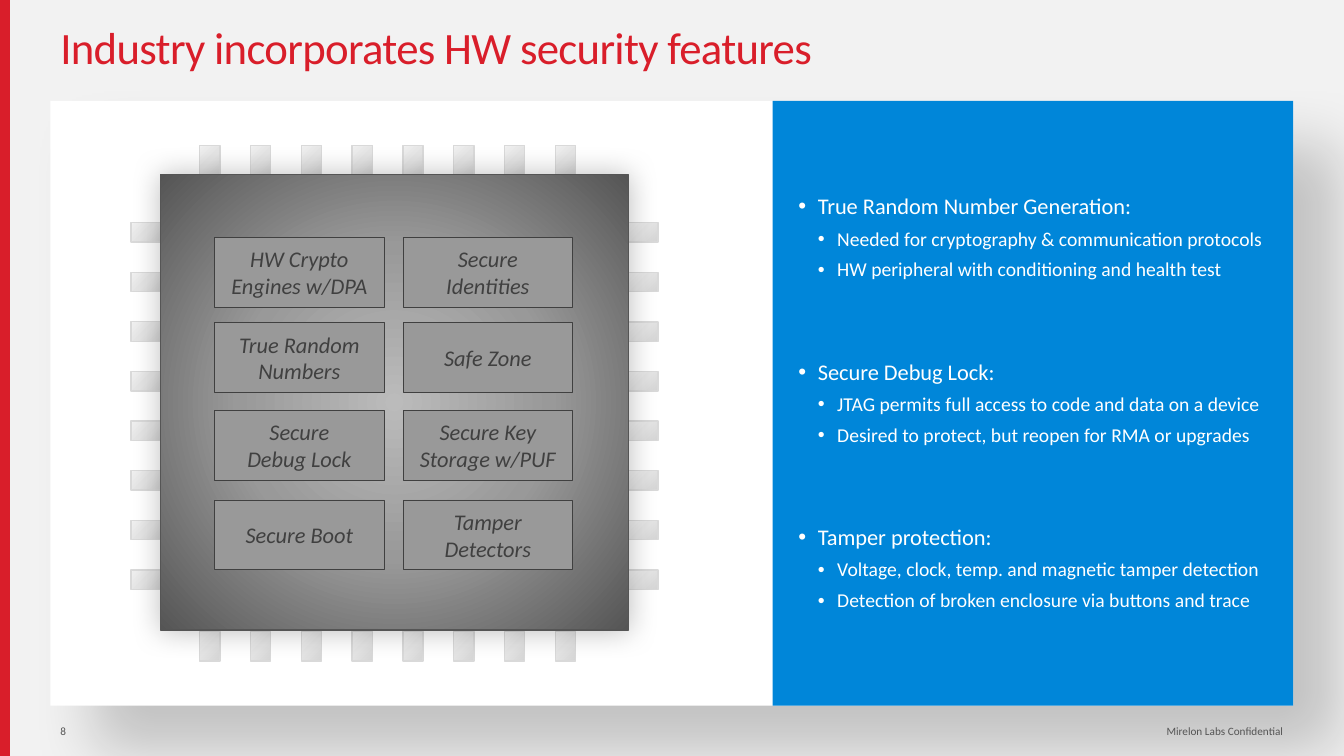
import dataclasses

import pptx
import pptx.dml.color
import pptx.enum.shapes
import pptx.enum.text
import pptx.oxml
import pptx.oxml.ns
import pptx.util

Cm = pptx.util.Cm
Pt = pptx.util.Pt
ALIGN = pptx.enum.text.PP_ALIGN


@dataclasses.dataclass(frozen=True)
class Theme:
    font: str = "Calibri"
    back: str = "F2F2F2"
    red: str = "D91E2A"
    blue: str = "0086D9"
    white: str = "FFFFFF"
    black: str = "000000"
    grey: str = "555555"
    ink: str = "404040"
    cell: str = "999999"
    edge: str = "D9D9D9"
    pin: tuple = ((0, "D5D5D5"), (50, "E4E4E4"), (100, "F1F1F1"))
    chip: tuple = ((0, "BBBBBB"), (48, "999999"), (100, "555555"))
    title: int = 32
    head: int = 16
    point: int = 14
    small: int = 8


THEME = Theme()

TOPICS = [
    ("True Random Number Generation:",
     "Needed for cryptography & communication protocols",
     "HW peripheral with conditioning and health test"),
    ("Secure Debug Lock:",
     "JTAG permits full access to code and data on a device",
     "Desired to protect, but reopen for RMA or upgrades"),
    ("Tamper protection:",
     "Voltage, clock, temp. and magnetic tamper detection",
     "Detection of broken enclosure via buttons and trace"),
]

CELLS = [
    (5.98, "HW Crypto\nEngines w/DPA", "Secure\nIdentities"),
    (8.13, "True Random Numbers", "Safe Zone"),
    (10.34, "Secure\nDebug Lock", "Secure Key Storage w/PUF"),
    (12.6, "Secure Boot", "Tamper Detectors"),
]


def tint(code):
    return pptx.dml.color.RGBColor.from_string(code)


def node(tag, attrs="", inner=""):
    space = pptx.oxml.ns.nsdecls("a")
    return pptx.oxml.parse_xml(f"<a:{tag} {space} {attrs}>{inner}</a:{tag}>")


def block(shapes, left, top, width, height, fill=None, line=None, weight=1):
    """Add a flat rectangle, with an outline if a line colour is given."""
    shape = shapes.add_shape(pptx.enum.shapes.MSO_SHAPE.RECTANGLE,
                             Cm(left), Cm(top), Cm(width), Cm(height))
    shape.shadow.inherit = False
    if fill:
        shape.fill.solid()
        shape.fill.fore_color.rgb = tint(fill)
    else:
        shape.fill.background()
    if line:
        shape.line.color.rgb = tint(line)
        shape.line.width = Pt(weight)
    else:
        shape.line.fill.background()
    return shape


def glow(shape, stops, focus):
    props = shape.fill._xPr
    marks = "".join(f'<a:gs pos="{pos * 1000}"><a:srgbClr val="{code}"/></a:gs>'
                    for pos, code in stops)
    sides = " ".join(f'{side}="{share * 1000}"' for side, share in zip("ltrb", focus))
    grad = node("gradFill", 'rotWithShape="1"',
                f'<a:gsLst>{marks}</a:gsLst>'
                f'<a:path path="circle"><a:fillToRect {sides}/></a:path>')
    props.replace(props.find(pptx.oxml.ns.qn("a:noFill")), grad)


def shade(shape, alpha, blur, gap, angle):
    effects = shape.fill._xPr.find(pptx.oxml.ns.qn("a:effectLst"))
    effects.append(node(
        "outerShdw",
        f'blurRad="{Pt(blur)}" dist="{Pt(gap)}" dir="{angle * 60000}" '
        'algn="ctr" rotWithShape="0"',
        f'<a:srgbClr val="{THEME.black}"><a:alpha val="{alpha * 1000}"/></a:srgbClr>'))


def style(para, size, color, align=ALIGN.LEFT, slant=False):
    para.alignment = align
    for run in para.runs:
        run.font.name = THEME.font
        run.font.size = Pt(size)
        run.font.italic = slant
        run.font.color.rgb = tint(color)


def label(shapes, left, top, width, height):
    """Add an empty wrapping text box that is centred vertically."""
    frame = shapes.add_textbox(Cm(left), Cm(top), Cm(width), Cm(height)).text_frame
    frame.word_wrap = True
    frame.vertical_anchor = pptx.enum.text.MSO_ANCHOR.MIDDLE
    return frame


def title(slide, text):
    frame = label(slide.shapes, 1.27, 0, 31.32, 2.54)
    frame.text = text
    para = frame.paragraphs[0]
    para.line_spacing = 0.9
    style(para, THEME.title, THEME.red)
    para.runs[0].font._element.set("spc", "-50")


def bullet(para, indent):
    props = para._p.get_or_add_pPr()
    props.set("marL", str(Cm(indent)))
    props.set("indent", str(-Cm(0.49)))
    props.append(node("buClr", "", f'<a:srgbClr val="{THEME.white}"/>'))
    props.append(node("buFont", 'typeface="Arial"'))
    props.append(node("buChar", 'char="•"'))


def topics(slide):
    """Write the bulleted topics over the blue panel."""
    frame = label(slide.shapes, 20.12, 2.54, 11.86, 15.24)
    frame.margin_left = frame.margin_right = 0
    for index, topic in enumerate(TOPICS):
        for level, text in zip((0, 1, 1), topic):
            first = index == level == 0
            para = frame.paragraphs[0] if first else frame.add_paragraph()
            para.text = text
            para.level = level
            bullet(para, 0.49 * (level + 1))
            para.line_spacing = 0.95
            if not first:
                para.space_before = Pt(6 if level else 56)
            style(para, THEME.point if level else THEME.head, THEME.white)


def pin(shapes, left, top, width, height, turn):
    shape = block(shapes, left, top, width, height, line=THEME.edge)
    glow(shape, THEME.pin, (100, 100, 0, 0))
    shape.rotation = turn


def cell(shapes, left, top, text):
    shape = block(shapes, left, top, 4.27, 1.76, THEME.cell, THEME.ink, 0.5)
    frame = shape.text_frame
    frame.word_wrap = True
    frame.vertical_anchor = pptx.enum.text.MSO_ANCHOR.MIDDLE
    frame.text = text
    for para in frame.paragraphs:
        style(para, THEME.head, THEME.ink, ALIGN.CENTER, True)


def chip(slide):
    """Draw the chip with its pins and its grid of features."""
    shapes = slide.shapes.add_group_shape().shapes
    for step in range(8):
        for top in (3.78, 16.03):
            pin(shapes, 4.92 + 1.28 * step, top, 0.74, 0.51, 270)
        for left, turn in ((3.3, 0), (15.82, 180)):
            pin(shapes, left, 5.61 + 1.25 * step, 0.76, 0.49, turn)
    body = block(shapes, 4.04, 4.4, 11.8, 11.48, line=THEME.grey)
    glow(body, THEME.chip, (50, 50, 50, 50))
    shade(body, 26, 21, 0, 0)
    for top, *names in CELLS:
        for left, name in zip((5.41, 10.16), names):
            cell(shapes, left, top, name)


def footer(slide, left, width, text, align):
    frame = label(slide.shapes, left, 17.78, width, 1.27)
    if align == ALIGN.LEFT:
        frame.margin_right = 0
    frame.text = text
    style(frame.paragraphs[0], THEME.small, THEME.grey, align)


def main():
    deck = pptx.Presentation()
    deck.slide_width = Cm(33.87)
    deck.slide_height = Cm(19.05)
    slide = deck.slides.add_slide(deck.slide_layouts[6])
    slide.background.fill.solid()
    slide.background.fill.fore_color.rgb = tint(THEME.back)
    block(slide.shapes, 0, 0, 0.25, 19.05, THEME.red)
    panel = block(slide.shapes, 1.27, 2.54, 31.32, 15.24, THEME.white)
    shade(panel, 20, 45, 45, 45)
    block(slide.shapes, 19.47, 2.54, 13.12, 15.24, THEME.blue)
    title(slide, "Industry incorporates HW security features")
    topics(slide)
    footer(slide, 2.16, 30.43, "Mirelon Labs Confidential", ALIGN.RIGHT)
    footer(slide, 1.27, 0.89, "8", ALIGN.LEFT)
    chip(slide)
    deck.save("out.pptx")


if __name__ == "__main__":
    main()
